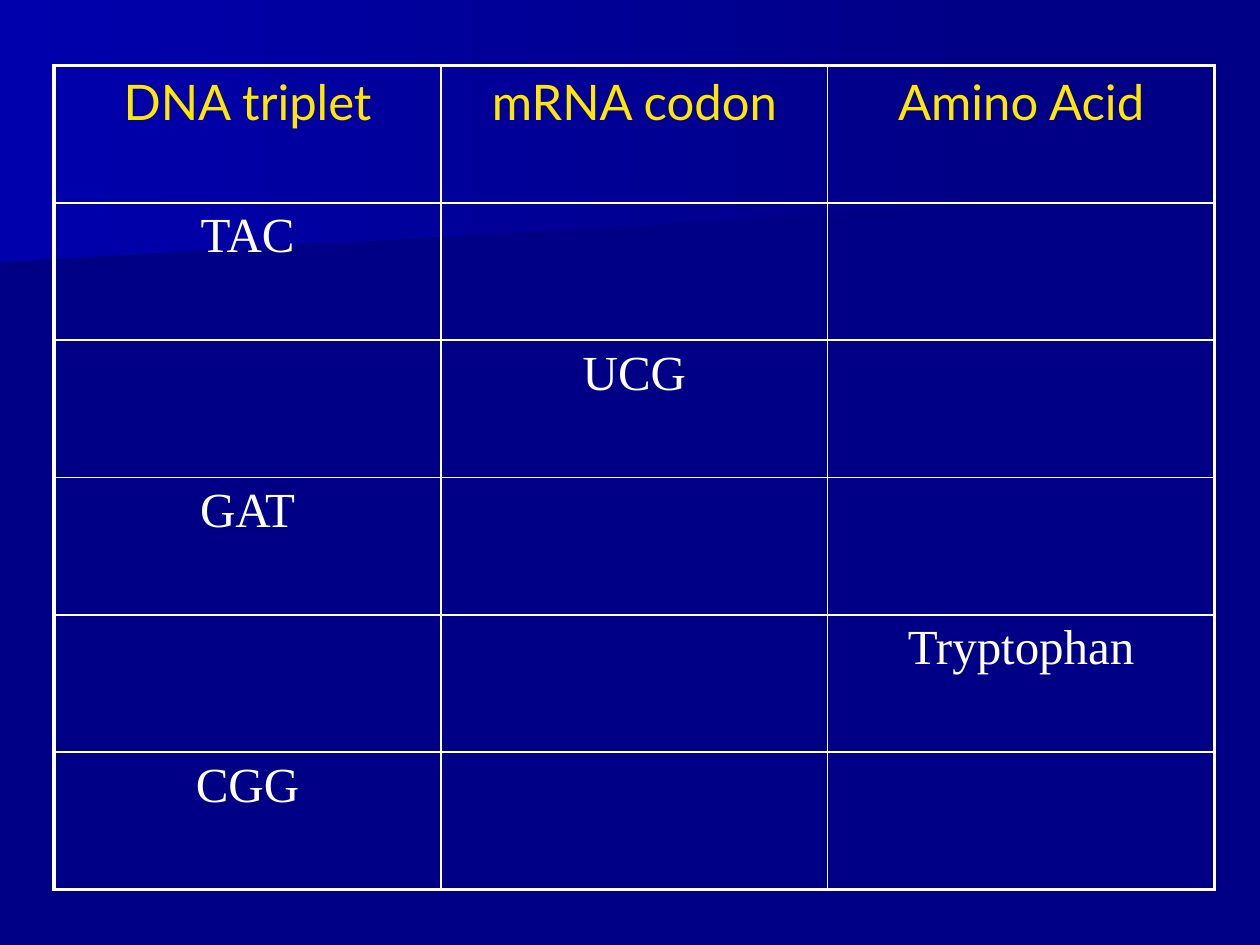
"""Build a codon worksheet slide with a bordered table on a blue background."""
from lxml.etree import SubElement
from pptx import Presentation
from pptx.dml.color import RGBColor
from pptx.enum.text import PP_ALIGN
from pptx.oxml.ns import qn
from pptx.util import Inches, Pt

ROWS = [
    ("DNA triplet", "mRNA codon", "Amino Acid"),
    ("TAC", "", ""),
    ("", "UCG", ""),
    ("GAT", "", ""),
    ("", "", "Tryptophan"),
    ("CGG", "", ""),
]
BANDS = [
    ([(0, 1.01), (7.79, 1.01), (7.78, 1.53), (0, 2.17)], "000083"),
    ([(0, 0), (7.92, 0), (7.92, 1.62), (0, 2.08)], "0000AC"),
]
BACKGROUND, WHITE, YELLOW = "000086", "FFFFFF", "FFE701"
LEFT, TOP, WIDTH, HEIGHT = 0.43, 0.52, 9.21, 6.54
OUTER, INNER = 2.25, 1


def color(value):
    return RGBColor.from_string(value)


def add_band(page, points, start):
    corners = [(Inches(x), Inches(y)) for x, y in points]
    builder = page.shapes.build_freeform(*corners[0], scale=1.0)
    builder.add_line_segments(corners[1:], close=True)
    band = builder.convert_to_shape()
    band.shadow.inherit = False
    band.line.fill.background()
    band.fill.gradient()
    band.fill.gradient_angle = 0
    for stop, shade in zip(band.fill.gradient_stops, (start, BACKGROUND)):
        stop.color.rgb = color(shade)


def set_borders(cell, widths):
    properties = cell._tc.get_or_add_tcPr()
    for side, width in widths.items():
        line = SubElement(properties, qn(f"a:ln{side}"), w=str(Pt(width)))
        fill = SubElement(line, qn("a:solidFill"))
        SubElement(fill, qn("a:srgbClr"), val=WHITE)


def write(cell, text, *, font, shade, size=28):
    para = cell.text_frame.paragraphs[0]
    para.alignment = PP_ALIGN.CENTER
    para.font.size = Pt(size)
    if text:
        span = para.add_run()
        span.text = text
        span.font.name = font
        span.font.size = Pt(size)
        span.font.bold = False
        span.font.color.rgb = color(shade)


def add_codon_table(page):
    row_count, column_count = len(ROWS), len(ROWS[0])
    frame = page.shapes.add_table(row_count, column_count, Inches(LEFT),
                                  Inches(TOP), Inches(WIDTH), Inches(HEIGHT))
    table = frame.table
    table.first_row = table.horz_banding = False
    for r, values in enumerate(ROWS):
        for c, text in enumerate(values):
            cell = table.cell(r, c)
            edges = {"L": c == 0, "R": c == column_count - 1,
                     "T": r == 0, "B": r == row_count - 1}
            set_borders(cell, {side: OUTER if outer else INNER
                               for side, outer in edges.items()})
            cell.fill.background()
            if r == 0:
                write(cell, text, font="Lato", shade=YELLOW)
            else:
                write(cell, text, font="Times New Roman", shade=WHITE)


def main():
    deck = Presentation()
    deck.slide_width, deck.slide_height = Inches(10), Inches(7.5)
    page = deck.slides.add_slide(deck.slide_layouts[6])
    page.background.fill.solid()
    page.background.fill.fore_color.rgb = color(BACKGROUND)
    for points, start in BANDS:
        add_band(page, points, start)
    add_codon_table(page)
    deck.save("out.pptx")


if __name__ == "__main__":
    main()
